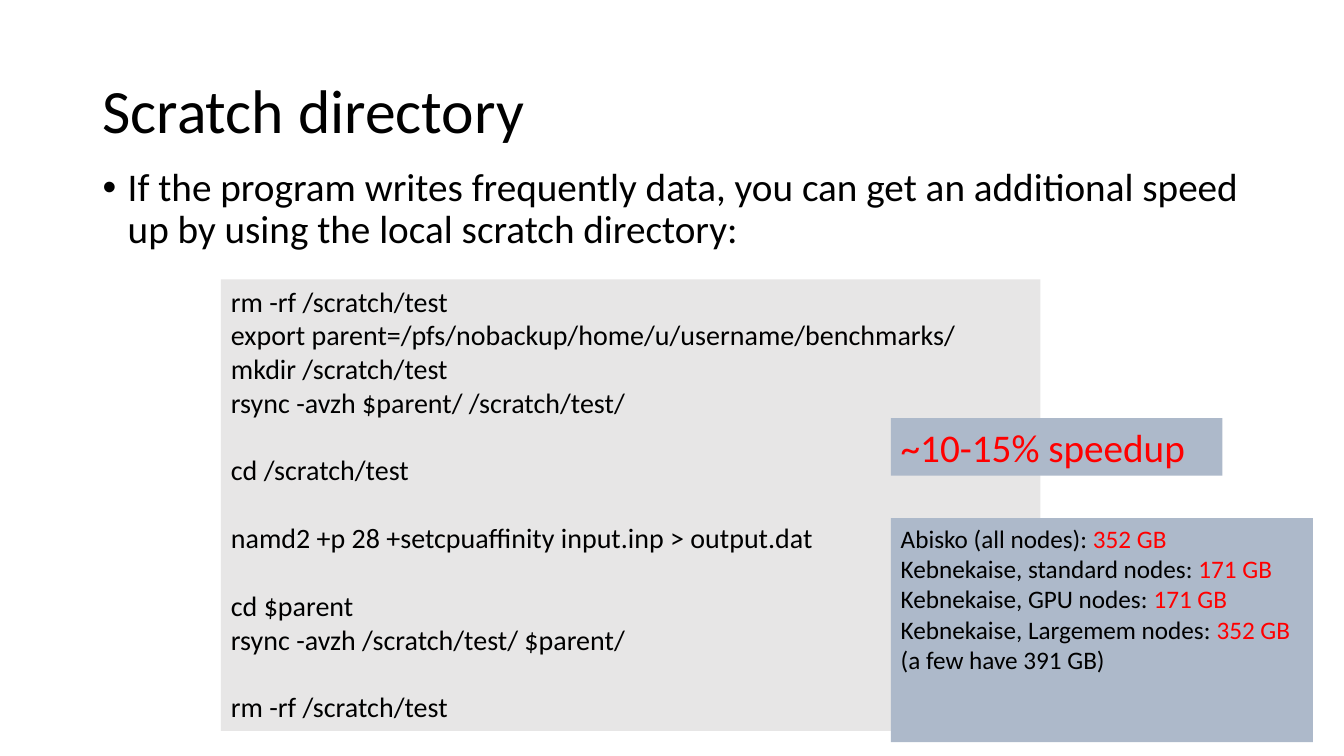
"""Build the slide on using the local scratch directory."""
from lxml.etree import SubElement
from pptx import Presentation
from pptx.dml.color import RGBColor
from pptx.enum.shapes import MSO_SHAPE
from pptx.enum.text import MSO_ANCHOR, MSO_AUTO_SIZE, PP_ALIGN
from pptx.oxml.ns import qn
from pptx.util import Cm, Pt

COLORS = {"text": "000000", "accent": "FF0000", "code": "E7E6E6", "note": "ADB9CA"}
FONT = "Calibri"

COMMAND_GROUPS = [
    ["rm -rf /scratch/test",
     "export parent=/pfs/nobackup/home/u/username/benchmarks/",
     "mkdir /scratch/test",
     "rsync -avzh $parent/ /scratch/test/"],
    ["cd /scratch/test"],
    ["namd2 +p 28 +setcpuaffinity input.inp > output.dat"],
    ["cd $parent", "rsync -avzh /scratch/test/ $parent/"],
    ["rm -rf /scratch/test"],
]
NODE_SIZES = [
    ("Abisko (all nodes): ", "352 GB", ""),
    ("Kebnekaise, standard nodes: ", "171 GB", ""),
    ("Kebnekaise, GPU nodes: ", "171 GB", ""),
    ("Kebnekaise, Largemem nodes: ", "352 GB", " (a few have 391 GB)"),
]


class SlideBuilder:
    """Hold the style and the current slide."""

    def __init__(self, presentation):
        """Add a title-and-content slide."""
        self.slide = presentation.slides.add_slide(presentation.slide_layouts[1])

    def style(self, run, size, color="text"):
        """Format one run."""
        run.font.name = FONT
        run.font.size = Pt(size)
        run.font.color.rgb = RGBColor.from_string(COLORS[color])

    def fill_placeholder(self, index, text, box, size, anchor):
        """Move a placeholder, set its text and return the paragraph."""
        holder = self.slide.placeholders[index]
        holder.left, holder.top, holder.width, holder.height = map(Cm, box)
        frame = holder.text_frame
        frame.text = text
        frame.auto_size = MSO_AUTO_SIZE.NONE
        frame.vertical_anchor = anchor
        paragraph = frame.paragraphs[0]
        paragraph.alignment = PP_ALIGN.LEFT
        paragraph.line_spacing = 0.9
        paragraph.space_before = Pt(0)
        self.style(paragraph.runs[0], size)
        return paragraph

    def title(self, text, box):
        """Write the slide title."""
        self.fill_placeholder(0, text, box, 44, MSO_ANCHOR.MIDDLE)

    def bullet(self, text, box):
        """Write the body as one bulleted paragraph."""
        paragraph = self.fill_placeholder(1, text, box, 28, MSO_ANCHOR.TOP)
        properties = paragraph._p.get_or_add_pPr()
        properties.set("marL", str(Cm(0.635)))
        properties.set("indent", str(-Cm(0.635)))
        SubElement(properties, qn("a:buFont"), typeface="Arial")
        SubElement(properties, qn("a:buChar"), char="•")

    def panel(self, lines, box, fill, size):
        """Draw a filled box; each line is (space before, [(text, color), ...])."""
        panel = self.slide.shapes.add_shape(MSO_SHAPE.RECTANGLE, *map(Cm, box))
        panel.shadow.inherit = False
        panel.fill.solid()
        panel.fill.fore_color.rgb = RGBColor.from_string(COLORS[fill])
        panel.line.fill.background()
        frame = panel.text_frame
        frame.word_wrap = True
        frame.vertical_anchor = MSO_ANCHOR.TOP
        for number, (space, parts) in enumerate(lines):
            paragraph = frame.add_paragraph() if number else frame.paragraphs[0]
            paragraph.alignment = PP_ALIGN.LEFT
            paragraph.space_before = Pt(space)
            for text, color in parts:
                run = paragraph.add_run()
                run.text = text
                self.style(run, size, color)


def main():
    """Compose and save the slide."""
    presentation = Presentation()
    presentation.slide_width, presentation.slide_height = Cm(33.87), Cm(19.05)
    builder = SlideBuilder(presentation)
    builder.title("Scratch directory", (2.33, 1.01, 29.21, 3.68))
    builder.bullet(
        "If the program writes frequently data, you can get an additional speed up "
        "by using the local scratch directory:", (2.33, 4.1, 29.21, 2.74))

    commands = [(24.4 if group and not row else 0, [(command, "text")])
                for group, block in enumerate(COMMAND_GROUPS)
                for row, command in enumerate(block)]
    builder.panel(commands, (5.57, 7.04, 20.65, 11.38), "code", 20)
    builder.panel([(0, [("~10-15% speedup", "accent")])],
                  (22.45, 10.54, 8.36, 1.45), "note", 28)
    nodes = [(0, [(text, color) for text, color in zip(row, ("text", "accent", "text")) if text])
             for row in NODE_SIZES]
    builder.panel(nodes, (22.45, 13.06, 10.64, 5.64), "note", 18)
    presentation.save("out.pptx")


if __name__ == "__main__":
    main()
